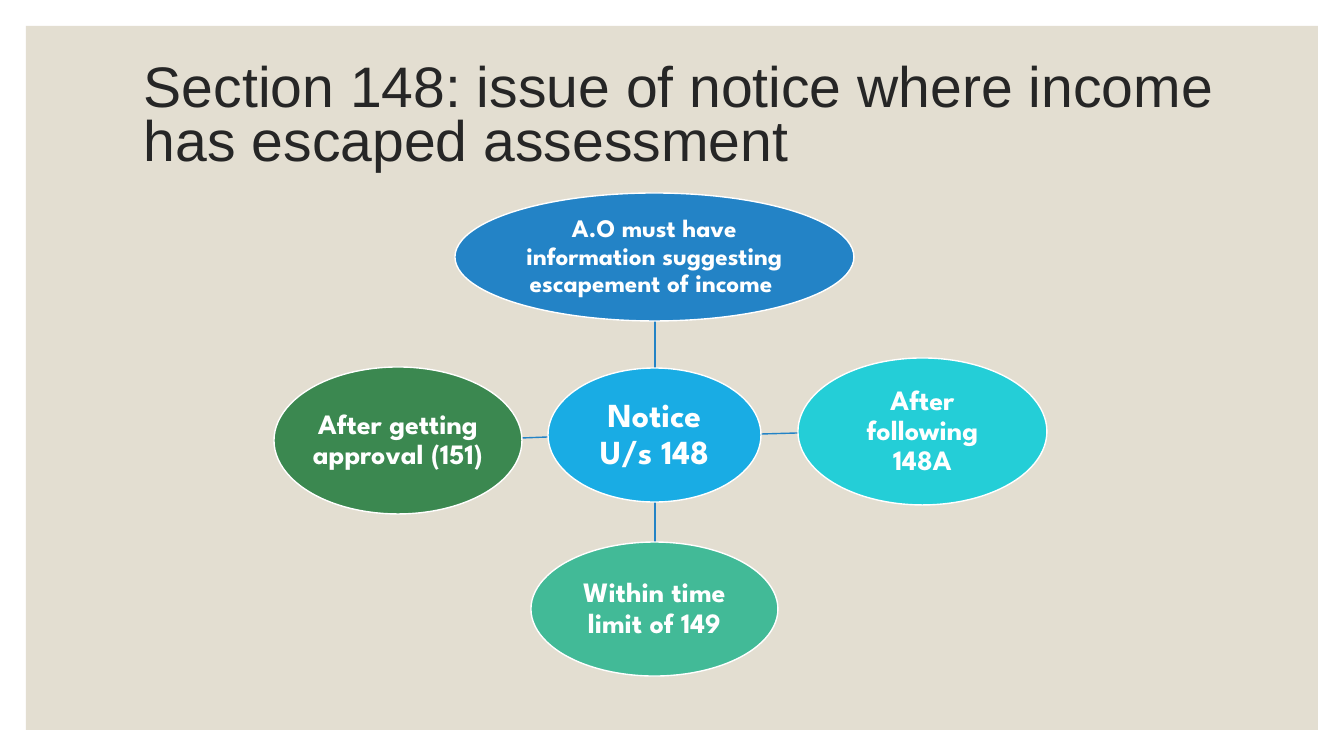
from lxml import etree
from pptx import Presentation
from pptx import util as u
from pptx.dml.color import RGBColor
from pptx.enum import shapes, text
from pptx.oxml import ns

EMU_PER_PX = 914400 / 100.8
HEADING_FONT, BUBBLE_FONT = "Arial", "League Spartan"
WHITE, BLUE = "FFFFFF", "2383C6"


def px(n):
    return u.Emu(round(n * EMU_PER_PX))


def rgb(hex_colour):
    return RGBColor.from_string(hex_colour)


def write(tf, words, font, size, colour, align, spacing, bold=False):
    tf.word_wrap = True
    tf.vertical_anchor = text.MSO_ANCHOR.MIDDLE
    p = tf.paragraphs[0]
    p.alignment = align
    p.line_spacing = spacing
    r = p.add_run()
    r.text = words
    r.font.name = font
    r.font.size = u.Pt(size)
    r.font.bold = bold
    r.font.color.rgb = rgb(colour)


def add_filled(s, kind, box, fill):
    sp = s.shapes.add_shape(kind, *map(px, box))
    sp.shadow.inherit = False
    sp.fill.solid()
    sp.fill.fore_color.rgb = rgb(fill)
    sp.line.fill.background()
    return sp


def add_title(s, box, words):
    tf = s.shapes.add_textbox(*map(px, box)).text_frame
    write(tf, words, HEADING_FONT, 40.8, "262626", text.PP_ALIGN.LEFT, 0.8)


def add_bubble(s, box, fill, words, size):
    sp = add_filled(s, shapes.MSO_SHAPE.OVAL, box, fill)
    sp.line.color.rgb = rgb(WHITE)
    sp.line.width = u.Pt(1)
    tf = sp.text_frame
    tf.margin_left = tf.margin_right = tf.margin_top = tf.margin_bottom = px(1)
    write(tf, words, BUBBLE_FONT, size, WHITE, text.PP_ALIGN.CENTER, 0.9, True)


def add_spoke(s, start, end):
    line = s.shapes.add_connector(
        shapes.MSO_CONNECTOR.STRAIGHT, *map(px, start + end))
    line.line.color.rgb = rgb(BLUE)
    line.line.width = u.Pt(1)
    etree.SubElement(line._element.spPr, ns.qn("a:effectLst"))


def main():
    prs = Presentation()
    prs.slide_width, prs.slide_height = px(1344), px(756)
    s = prs.slides.add_slide(prs.slide_layouts[6])

    # Backdrop and heading
    add_filled(s, shapes.MSO_SHAPE.RECTANGLE, (26, 26, 1292, 704), "E3DED1")
    add_title(s, (134, 44, 1100, 148),
              "Section 148: issue of notice where income has escaped assessment")

    # Spokes from the notice to its conditions
    for start, end in [
        ((655, 368), (655, 321)),
        ((761, 434), (798, 433)),
        ((655, 502), (655, 542)),
        ((548, 437), (522, 438)),
    ]:
        add_spoke(s, start, end)

    # Notice in the centre, conditions clockwise from the top
    for bubble in [
        ((548, 368, 213, 134), "19ACE4", "Notice U/s 148", 24),
        ((455, 193, 399, 128), BLUE,
         "A.O must have information suggesting escapement of income ", 18),
        ((798, 358, 249, 147), "24CED7", "After following 148A", 20),
        ((531, 542, 247, 134), "42BA97", "Within time limit of 149", 20),
        ((274, 367, 248, 147), "3B8850", "After getting approval (151)", 20),
    ]:
        add_bubble(s, *bubble)

    prs.save("out.pptx")


if __name__ == "__main__":
    main()
